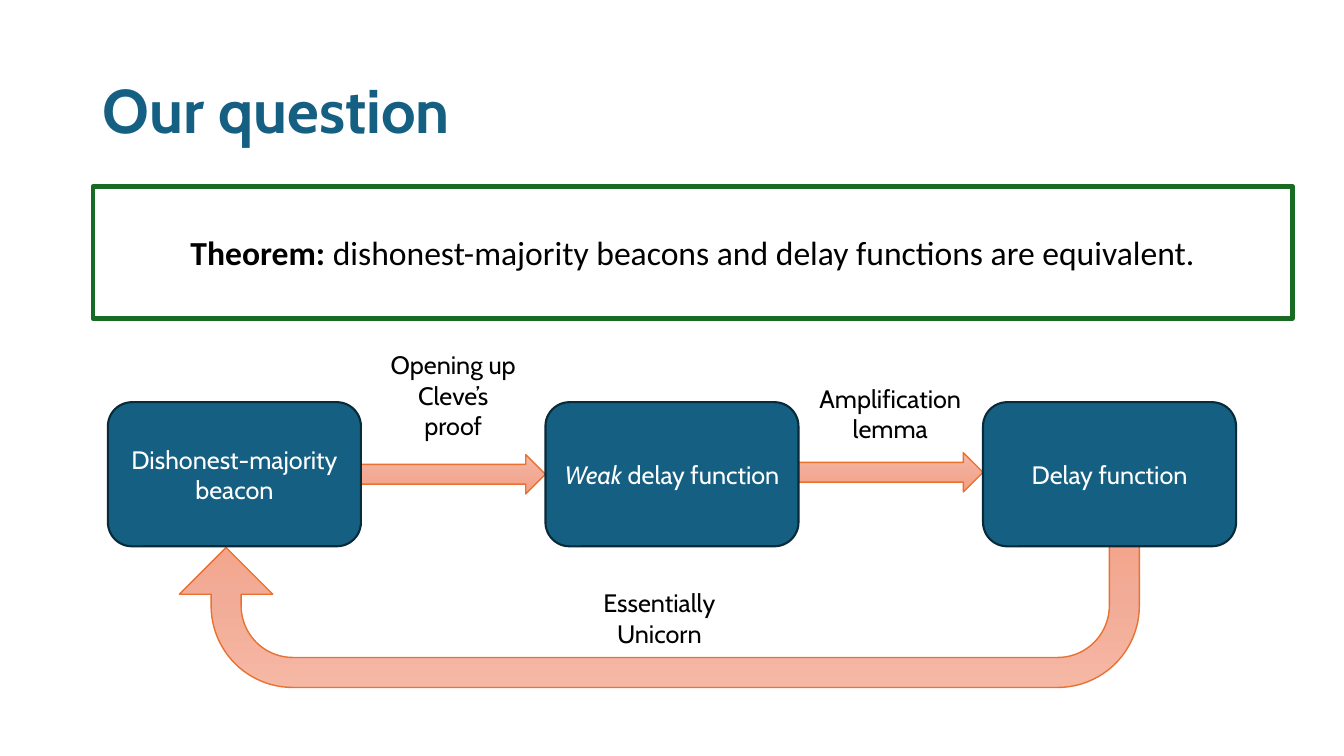
from copy import deepcopy
from dataclasses import dataclass

from pptx import Presentation
from pptx.dml.color import RGBColor
from pptx.enum.shapes import MSO_SHAPE as Preset
from pptx.enum.text import MSO_ANCHOR as Anchor, PP_ALIGN as Align
from pptx.oxml.ns import qn
from pptx.util import Inches, Pt

COLORS = {
    "blue": "156082",
    "navy": "092A39",
    "green": "196B24",
    "orange": "E97132",
    "light": "F5B8A5",
    "middle": "F2AB96",
    "dark": "F59E82",
    "white": "FFFFFF",
    "black": "000000",
}
NODE_LEFT, NODE_TOP, NODE_WIDTH, NODE_HEIGHT = 1.07, 3.99, 2.51, 1.43
NODE_STEP = 4.34


@dataclass(frozen=True)
class Words:
    text: str
    bold: bool = False
    italic: bool = False


@dataclass(frozen=True)
class Area:
    left: float
    top: float
    width: float
    height: float

    def lengths(self) -> list:
        return [Inches(n) for n in (self.left, self.top, self.width, self.height)]


@dataclass(frozen=True)
class Label:
    text: str
    area: Area


@dataclass(frozen=True)
class Arrow:
    preset: Preset
    area: Area
    rotation: int = 0
    adjustments: tuple[float, ...] = (0.5, 0.5)


NODES = [
    [Words("Dishonest-majority beacon")],
    [Words("Weak", italic=True), Words(" delay function")],
    [Words("Delay function")],
]
ARROWS = [
    Arrow(Preset.U_TURN_ARROW, Area(1.78, 4.97, 9.52, 1.85), 180,
          (0.161, 0.25, 0.25, 0.438, 0.75)),
    Arrow(Preset.RIGHT_ARROW, Area(7.92, 4.49, 1.83, 0.39)),
    Arrow(Preset.RIGHT_ARROW, Area(3.58, 4.51, 1.83, 0.39)),
]
LABELS = [
    Label("Opening up Cleve’s proof", Area(3.75, 3.42, 1.49, 1.01)),
    Label("Amplification lemma", Area(8, 3.75, 1.66, 0.71)),
    Label("Essentially Unicorn", Area(5.71, 5.78, 1.66, 0.71)),
]


def rgb(name: str) -> RGBColor:
    return RGBColor.from_string(COLORS[name])


def write(box, words: list[Words], *, size: int = 18, font: str = "Cabin",
          color: str = "black", align: Align = Align.CENTER,
          anchor: Anchor = Anchor.MIDDLE, spacing: float = 1.0) -> None:
    frame = box.text_frame
    frame.word_wrap = True
    frame.vertical_anchor = anchor
    para = frame.paragraphs[0]
    para.alignment = align
    para.line_spacing = spacing
    for part in words:
        span = para.add_run()
        span.text = part.text
        span.font.name = font
        span.font.size = Pt(size)
        span.font.bold = part.bold
        span.font.italic = part.italic
        span.font.color.rgb = rgb(color)


def add_box(page, preset: Preset, area: Area, fill: str, line: str, weight: float):
    box = page.shapes.add_shape(preset, *area.lengths())
    box.shadow.inherit = False
    box.fill.solid()
    box.fill.fore_color.rgb = rgb(fill)
    box.line.color.rgb = rgb(line)
    box.line.width = Pt(weight)
    return box


def add_arrow(page, arrow: Arrow) -> None:
    shape = add_box(page, arrow.preset, arrow.area, "middle", "orange", 1)
    shape.rotation = arrow.rotation
    for index, value in enumerate(arrow.adjustments):
        shape.adjustments[index] = value
    shape.fill.gradient()
    shape.fill.gradient_angle = 270
    stop_list = next(shape.element.iter(qn("a:gsLst")))
    stop_list.insert(1, deepcopy(stop_list[0]))
    stops = zip(shape.fill.gradient_stops, ("light", "middle", "dark"), (0, 0.5, 1))
    for stop, color, position in stops:
        stop.color.rgb = rgb(color)
        stop.position = position


def main() -> None:
    deck = Presentation()
    deck.slide_width, deck.slide_height = Inches(13.33), Inches(7.5)
    page = deck.slides.add_slide(deck.slide_layouts[6])

    for arrow in ARROWS:
        add_arrow(page, arrow)

    title = page.shapes.add_textbox(*Area(0.92, 0.4, 11.5, 1.45).lengths())
    write(title, [Words("Our question", bold=True)], size=44, color="blue",
          align=Align.LEFT, spacing=0.9)

    theorem = add_box(page, Preset.RECTANGLE, Area(0.92, 1.85, 11.9, 1.31),
                      "white", "green", 3)
    statement = "dishonest-majority beacons and delay functions are equivalent."
    write(theorem, [Words("Theorem: ", bold=True), Words(statement)],
          size=24, font="Calibri")

    for index, words in enumerate(NODES):
        area = Area(NODE_LEFT + index * NODE_STEP, NODE_TOP, NODE_WIDTH, NODE_HEIGHT)
        node = add_box(page, Preset.ROUNDED_RECTANGLE, area, "blue", "navy", 1.5)
        write(node, words, color="white")

    for label in LABELS:
        box = page.shapes.add_textbox(*label.area.lengths())
        write(box, [Words(label.text)], anchor=Anchor.TOP)

    deck.save("out.pptx")


if __name__ == "__main__":
    main()
